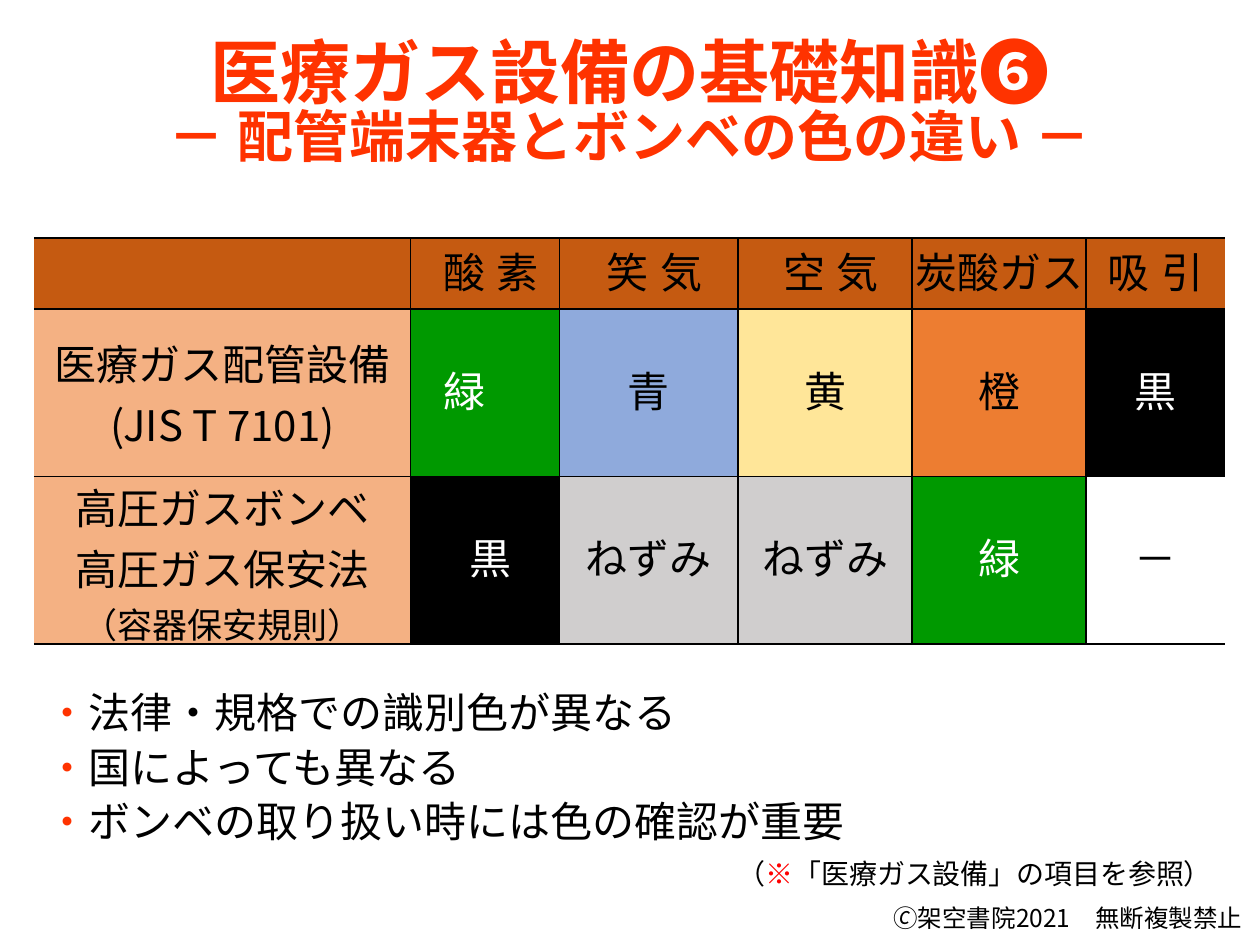
import pptx
import pptx.util
import pptx.oxml
import pptx.dml.color
import pptx.enum.text
from dataclasses import dataclass

Pt = pptx.util.Pt
Align = pptx.enum.text.PP_ALIGN
Anchor = pptx.enum.text.MSO_ANCHOR


@dataclass(frozen=True)
class Theme:
    red: str = "FF3300"
    mark: str = "FF0000"
    black: str = "000000"
    white: str = "FFFFFF"
    rust: str = "C55A11"
    peach: str = "F4B183"
    green: str = "009900"
    blue: str = "8FAADC"
    yellow: str = "FFE699"
    orange: str = "ED7D31"
    gray: str = "D0CECE"
    title: int = 40
    lead: int = 32
    body: int = 24
    small: int = 20
    note: int = 16
    foot: int = 14
    arial: str = "Arial"
    noto: str = "Noto Sans CJK JP"


theme = Theme()
ns = 'xmlns:a="http://schemas.openxmlformats.org/drawingml/2006/main"'


def write(frame, lines, align, font, pitch=None):
    for i, (gap, runs) in enumerate(lines):
        para = frame.paragraphs[0] if i == 0 else frame.add_paragraph()
        para.alignment = align
        para.space_before = Pt(gap)
        if pitch:
            para.line_spacing = pitch
        for text, size, color, bold in runs:
            run = para.add_run()
            run.text = text
            run.font.size = Pt(size)
            run.font.bold = bold
            run.font.name = font
            run.font.color.rgb = pptx.dml.color.RGBColor.from_string(color)
            run.font._element.append(pptx.oxml.parse_xml(f'<a:ea {ns} typeface="{font}"/>'))


def edge(cell, side, width):
    fill = f'<a:solidFill><a:srgbClr val="{theme.black}"/></a:solidFill>' if width else "<a:noFill/>"
    xml = f'<a:ln{side} {ns} w="{int(Pt(width))}">{fill}</a:ln{side}>'
    cell._tc.get_or_add_tcPr().append(pptx.oxml.parse_xml(xml))


deck = pptx.Presentation()
deck.slide_width, deck.slide_height = Pt(720), Pt(540)
slide = deck.slides.add_slide(deck.slide_layouts[6])

points = ["法律・規格での識別色が異なる", "国によっても異なる", "ボンベの取り扱い時には色の確認が重要"]
facts = [
    (12 if i == 0 else 2.4, [("・", theme.body, theme.red, False), (text, theme.body, theme.black, False)])
    for i, text in enumerate(points)
]
heads = [
    (0, [("医療ガス設備の基礎知識❻", theme.title, theme.red, True)]),
    (0, [("－ 配管端末器とボンベの色の違い －", theme.lead, theme.red, True)]),
]
note = [(8, [
    ("（", theme.note, theme.black, False),
    ("※", theme.note, theme.mark, False),
    ("「医療ガス設備」の項目を参照）", theme.note, theme.black, False),
])]
foot = [(0, [("🄫架空書院2021　無断複製禁止", theme.foot, theme.black, False)])]

boxes = [
    ((19.4, 388.8, 620.6, 100), facts, Align.LEFT, theme.arial, None),
    ((6.5, 20.9, 707, 94.3), heads, Align.CENTER, theme.noto, 0.83),
    ((402.5, 488.9, 297.4, 26.6), note, Align.RIGHT, theme.noto, 0.83),
    ((324.7, 515.5, 392.4, 24.5), foot, Align.RIGHT, theme.noto, 0.83),
]
for place, lines, align, font, pitch in boxes:
    frame = slide.shapes.add_textbox(*map(Pt, place)).text_frame
    frame.word_wrap = True
    write(frame, lines, align, font, pitch)

ink, pale = theme.black, theme.white
rows = [
    [("", theme.rust, ink)]
    + [(text, theme.rust, ink) for text in (" 酸 素", " 笑 気", " 空 気", "炭酸ガス", "吸 引")],
    [("医療ガス配管設備\n(JIS T 7101)", theme.peach, ink), ("緑　", theme.green, pale),
     ("青", theme.blue, ink), ("黄", theme.yellow, ink),
     ("橙", theme.orange, ink), ("黒", theme.black, pale)],
    [("高圧ガスボンベ\n高圧ガス保安法\n（容器保安規則）", theme.peach, ink), (" 黒", theme.black, pale),
     ("ねずみ", theme.gray, ink), ("ねずみ", theme.gray, ink),
     ("緑", theme.green, pale), ("－", None, ink)],
]
wide = [215.3, 85, 102.2, 99.4, 99.4, 79.2]
tall = [40.3, 95.8, 95.8]
rules = [1.5, 1.5, 1, 1.5]

table = slide.shapes.add_table(3, 6, Pt(19.4), Pt(136.1), Pt(sum(wide)), Pt(sum(tall))).table
table.first_row = table.horz_banding = False
for col, width in zip(table.columns, wide):
    col.width = Pt(width)
for r, row in enumerate(rows):
    table.rows[r].height = Pt(tall[r])
    for c, (text, fill, color) in enumerate(row):
        cell = table.cell(r, c)
        cell.margin_left = cell.margin_right = cell.margin_top = cell.margin_bottom = 0
        cell.vertical_anchor = Anchor.MIDDLE
        edge(cell, "L", 1 if c else 0)
        edge(cell, "R", 1 if c < 5 else 0)
        edge(cell, "T", rules[r])
        edge(cell, "B", rules[r + 1])
        if fill:
            cell.fill.solid()
            cell.fill.fore_color.rgb = pptx.dml.color.RGBColor.from_string(fill)
        else:
            cell.fill.background()
        if text:
            lines = [
                (0 if c == 0 else 4.8, [(part, theme.small if part[0] == "（" else theme.body, color, False)])
                for part in text.split("\n")
            ]
            write(cell.text_frame, lines, Align.CENTER, theme.noto if c == 0 else theme.arial)

deck.save("out.pptx")
